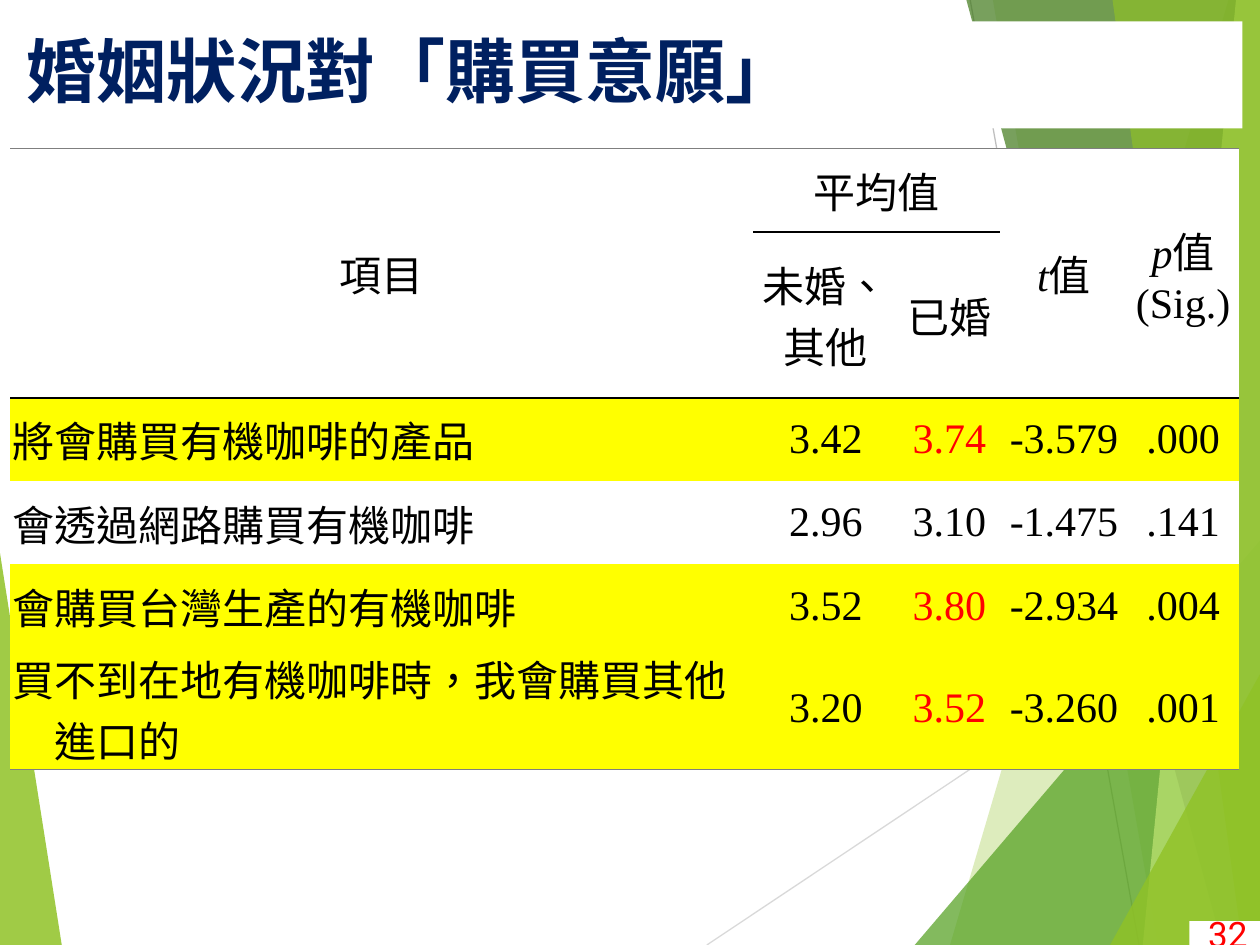
from lxml import etree
from pptx import Presentation
from pptx.dml.color import RGBColor
from pptx.enum.shapes import MSO_CONNECTOR, MSO_SHAPE
from pptx.enum.text import MSO_ANCHOR, PP_ALIGN
from pptx.oxml.ns import qn
from pptx.util import Inches, Pt

LEFT, CENTER, RIGHT = PP_ALIGN.LEFT, PP_ALIGN.CENTER, PP_ALIGN.RIGHT
MIDDLE = MSO_ANCHOR.MIDDLE
WIDTH, HEIGHT = 10, 7.5
NO_GRID_STYLE = "{2D5ABB26-0587-4C30-8999-92F81FD0307C}"
COLORS = {
    "white": "FFFFFF", "black": "000000", "navy": "002060", "red": "FF0000",
    "yellow": "FFFF00", "rule": "7F7F7F", "pale": "D9D9D9", "silver": "BFBFBF",
    "lime": "90C226", "green": "54A021", "forest": "3F7819", "light": "C0E474",
}

# Content
TITLE = "婚姻狀況對「購買意願」"
PAGE_NUMBER = "32"
# row, column, last row, last column, runs as (text, italic)
HEADERS = [
    (0, 0, 1, 0, [("項目", False)]),
    (0, 1, 0, 2, [("平均值", False)]),
    (0, 3, 1, 3, [("t", True), ("值", False)]),
    (0, 4, 1, 4, [("p", True), ("值(Sig.)", False)]),
    (1, 1, 1, 1, [("未婚、其他", False)]),
    (1, 2, 1, 2, [("已婚", False)]),
]
# significant, item, values
RESULTS = [
    (True, "將會購買有機咖啡的產品", ["3.42", "3.74", "-3.579", ".000"]),
    (False, "會透過網路購買有機咖啡", ["2.96", "3.10", "-1.475", ".141"]),
    (True, "會購買台灣生產的有機咖啡", ["3.52", "3.80", "-2.934", ".004"]),
    (True, "買不到在地有機咖啡時，我會購買其他進口的", ["3.20", "3.52", "-3.260", ".001"]),
]
MARRIED_COLUMN = 2
COLUMN_WIDTHS = [5.9, 1.15, 0.81, 1.01, 0.88]
ROW_HEIGHTS = [0.66, 1.32, 0.66, 0.66, 0.66, 0.79]

# Background: lines and facets, from back to front
LEFT_FACET = ("lime", 85, [(0, 4.39), (0.49, HEIGHT), (0, HEIGHT)])
LINES = [
    ("pale", (5.61, HEIGHT), (WIDTH, 4.57)),
    ("silver", (7.7, 0), (9.04, HEIGHT)),
]
# colour, opacity, top-left x, bottom-left x: bands reaching the right edge
BANDS = [("lime", 30, 9.75, 7.54), ("lime", 20, 7.88, 9.19),
         ("forest", 70, 7.67, 9.7), ("light", 70, 9.81, 9.07),
         ("lime", 65, 8.83, 9.86)]
# colour, opacity, bottom-left x, top y: triangles in the right corner
CORNERS = [("green", 72, 7.26, 4.29), ("lime", 80, 8.81, 5.35)]


def rgb(name):
    return RGBColor.from_string(COLORS[name])


def add_facet(slide, color, opacity, points):
    corners = [(Inches(x), Inches(y)) for x, y in points]
    builder = slide.shapes.build_freeform(*corners[0])
    builder.add_line_segments(corners[1:], close=True)
    shape = builder.convert_to_shape()
    shape.shadow.inherit = False
    shape.fill.solid()
    shape.fill.fore_color.rgb = rgb(color)
    shape.line.fill.background()
    color_node = shape.fill._xPr.find(qn("a:solidFill"))[0]
    etree.SubElement(color_node, qn("a:alpha"), val=str(opacity * 1000))


def add_line(slide, color, start, end):
    line = slide.shapes.add_connector(
        MSO_CONNECTOR.STRAIGHT, *(Inches(value) for value in start + end))
    line.line.color.rgb = rgb(color)
    line.line.width = Pt(0.75)
    etree.SubElement(line._element.spPr, qn("a:effectLst"))


def write(paragraph, runs, align, size, color, font="Roboto", bold=False):
    paragraph.alignment = align
    for text, italic in runs:
        run = paragraph.add_run()
        run.text = text
        settings = {"name": font, "size": Pt(size), "bold": bold, "italic": italic}
        for name, value in settings.items():
            setattr(run.font, name, value)
        run.font.color.rgb = rgb(color)
        run._r.get_or_add_rPr().set("lang", "zh-TW")


def add_label(slide, box, text, bottom=0.05, **text_format):
    shape = slide.shapes.add_shape(MSO_SHAPE.RECTANGLE, *map(Inches, box))
    shape.shadow.inherit = False
    shape.fill.solid()
    shape.fill.fore_color.rgb = rgb("white")
    shape.line.fill.background()
    shape.text_frame.word_wrap = True
    shape.text_frame.vertical_anchor = MIDDLE
    shape.text_frame.margin_bottom = Inches(bottom)
    write(shape.text_frame.paragraphs[0], [(text, False)], **text_format)


def fill_cell(cell, runs, align=CENTER, color="black", hanging=0):
    paragraph = cell.text_frame.paragraphs[0]
    write(paragraph, runs, align, 24, color, "Times New Roman")
    properties = paragraph._p.get_or_add_pPr()
    properties.set("marL", str(Inches(hanging)))
    properties.set("indent", str(Inches(-hanging)))


def set_borders(cell, colors):
    properties = cell._tc.get_or_add_tcPr()
    for position, side in enumerate("LRTB"):
        border = etree.Element(qn("a:ln" + side), w=str(Pt(1)))
        if side in colors:
            fill = etree.SubElement(border, qn("a:solidFill"))
            etree.SubElement(fill, qn("a:srgbClr"), val=COLORS[colors[side]])
        else:
            etree.SubElement(border, qn("a:noFill"))
        properties.insert(position, border)


def border_colors(row, column):
    colors = {}
    if row == 0:
        colors["T"] = "rule"
    if row == 2 or (row == 1 and column in (1, 2)):
        colors["T"] = "black"
    if row in (0, 1):
        colors["B"] = "black"
    if row == len(ROW_HEIGHTS) - 1:
        colors["B"] = "rule"
    return colors


def add_results_table(slide):
    row_count, column_count = len(ROW_HEIGHTS), len(COLUMN_WIDTHS)
    frame = slide.shapes.add_table(
        row_count, column_count, Inches(0.08), Inches(1.18),
        Inches(sum(COLUMN_WIDTHS)), Inches(sum(ROW_HEIGHTS)))
    table = frame.table
    table.first_row = table.horz_banding = False
    table._tbl.tblPr.find(qn("a:tableStyleId")).text = NO_GRID_STYLE
    for column, width in zip(table.columns, COLUMN_WIDTHS):
        column.width = Inches(width)
    for row, height in zip(table.rows, ROW_HEIGHTS):
        row.height = Inches(height)

    # Cell format: significant results are highlighted
    highlights = [False, False] + [result[0] for result in RESULTS]
    margins = {"margin_left": 0.02, "margin_right": 0.02,
               "margin_top": 0, "margin_bottom": 0}
    for row, highlight in enumerate(highlights):
        for column in range(column_count):
            cell = table.cell(row, column)
            cell.vertical_anchor = MIDDLE
            for name, value in margins.items():
                setattr(cell, name, Inches(value))
            cell.fill.solid()
            cell.fill.fore_color.rgb = rgb("yellow" if highlight else "white")
            set_borders(cell, border_colors(row, column))

    # Cell text
    for row, column, last_row, last_column, runs in HEADERS:
        cell = table.cell(row, column)
        if (row, column) != (last_row, last_column):
            cell.merge(table.cell(last_row, last_column))
        fill_cell(cell, runs)
    for row, (significant, item, values) in enumerate(RESULTS, start=2):
        fill_cell(table.cell(row, 0), [(item, False)], LEFT, hanging=0.33)
        for column, value in enumerate(values, start=1):
            marked = significant and column == MARRIED_COLUMN
            fill_cell(table.cell(row, column), [(value, False)],
                      color="red" if marked else "black")


def main():
    presentation = Presentation()
    presentation.slide_width = Inches(WIDTH)
    presentation.slide_height = Inches(HEIGHT)
    slide = presentation.slides.add_slide(presentation.slide_layouts[6])

    # Background
    bands = [(color, opacity, [(top, 0), (bottom, HEIGHT), (WIDTH, HEIGHT), (WIDTH, 0)])
             for color, opacity, top, bottom in BANDS]
    corners = [(color, opacity, [(left, HEIGHT), (WIDTH, top), (WIDTH, HEIGHT)])
               for color, opacity, left, top in CORNERS]
    add_facet(slide, *LEFT_FACET)
    for line in LINES:
        add_line(slide, *line)
    for facet in bands[:2] + corners[:1] + bands[2:] + corners[1:]:
        add_facet(slide, *facet)

    # Title, table and page number
    add_label(slide, (0.11, 0.17, 9.75, 0.85), TITLE, bottom=0.13,
              align=LEFT, size=40, color="navy", bold=True)
    add_results_table(slide)
    add_label(slide, (9.44, 7.31, 0.56, 0.19), PAGE_NUMBER,
              align=RIGHT, size=20, color="red")
    presentation.save("out.pptx")


if __name__ == "__main__":
    main()
